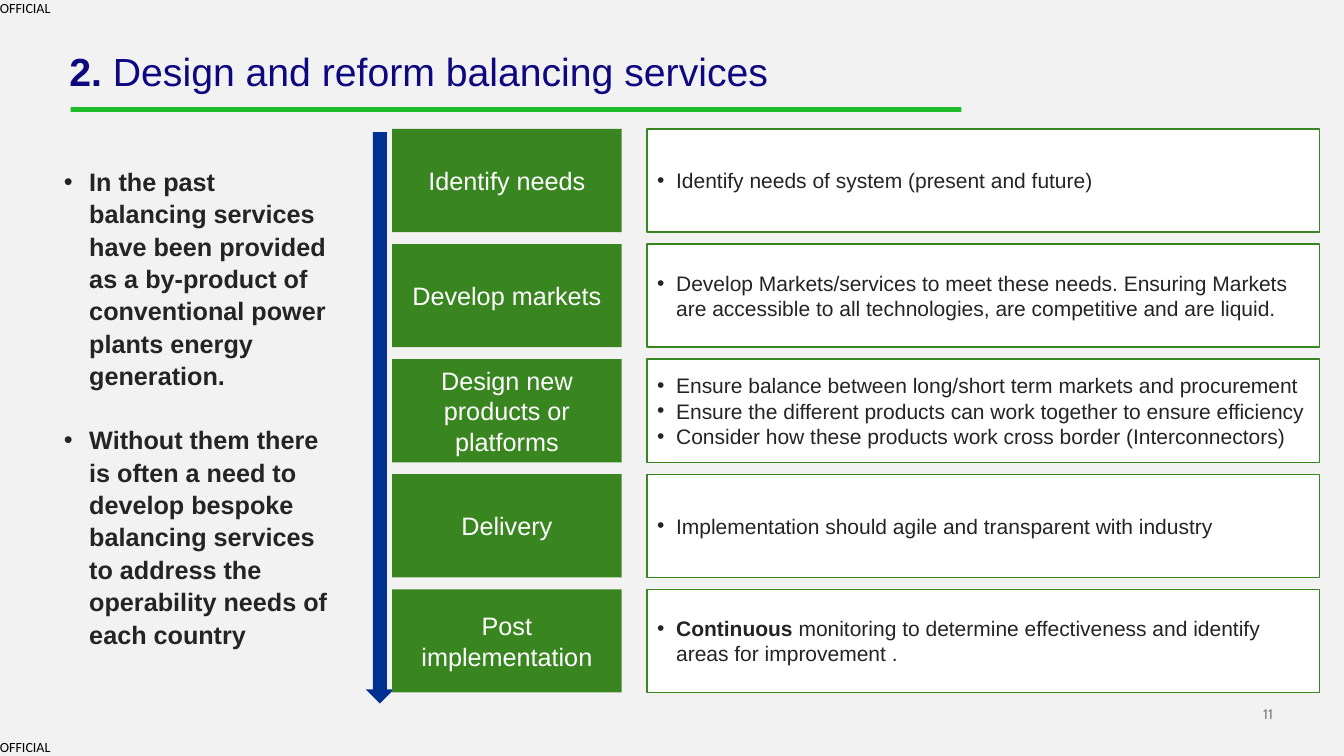
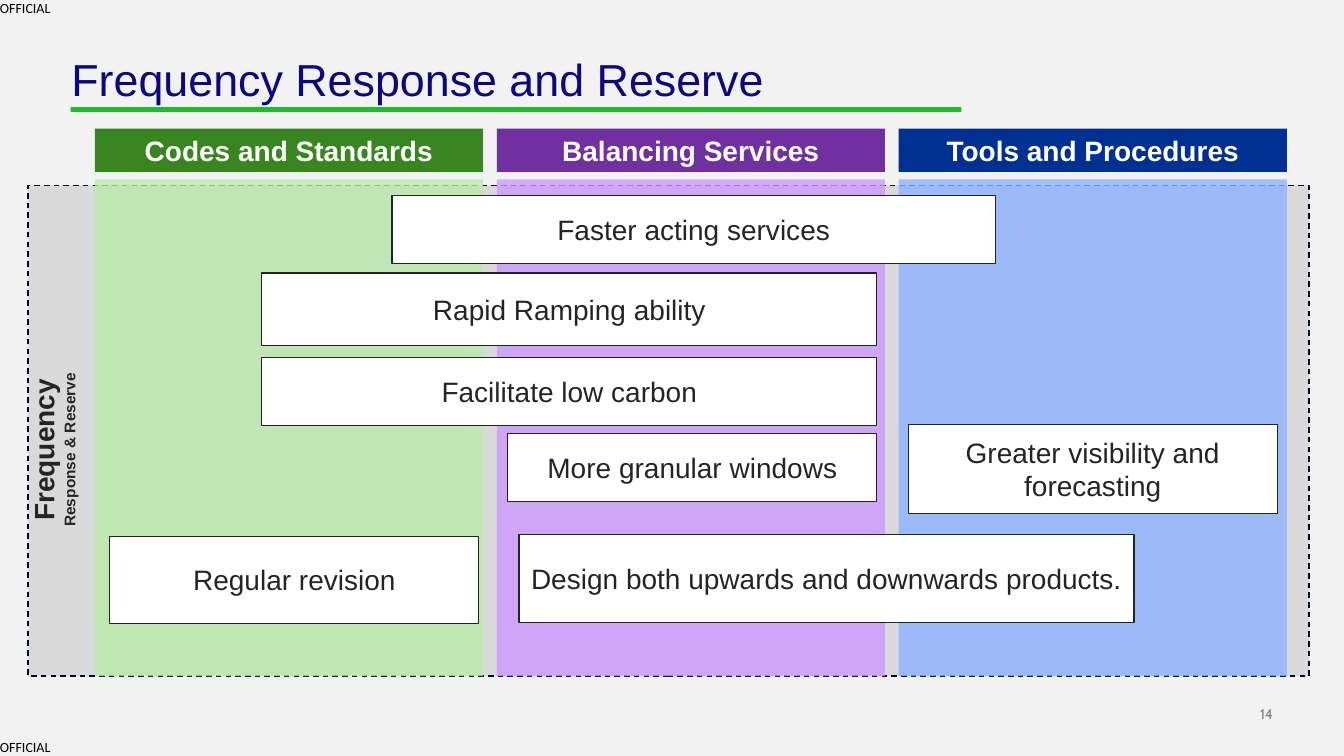
import lxml.etree
import pptx
import pptx.dml.color
import pptx.enum.dml
import pptx.enum.shapes
import pptx.enum.text
import pptx.oxml.ns
import pptx.util

Cm = pptx.util.Cm
Pt = pptx.util.Pt
Align = pptx.enum.text.PP_ALIGN
Anchor = pptx.enum.text.MSO_ANCHOR
Form = pptx.enum.shapes.MSO_SHAPE
qn = pptx.oxml.ns.qn


class Deck:
    """Hold the shared style and the current slide, and draw its elements."""

    hues = {
        "back": "F2F2F2", "title": "0D0780", "rule": "1CBC2B", "ink": "242424",
        "black": "000000", "white": "FFFFFF", "page": "7F7F7F", "grey": "D9D9D9",
        "dash": "000D28", "green": "398621", "purple": "7030A0", "blue": "003192",
        "mint": "BAEAAB", "lilac": "CC99FF", "sky": "8DB3FF",
    }

    def __init__(self):
        self.show = pptx.Presentation()
        self.show.slide_width = Cm(33.87)
        self.show.slide_height = Cm(19.05)
        self.slide = None

    def hue(self, name):
        return pptx.dml.color.RGBColor.from_string(self.hues[name])

    def page(self, number):
        self.slide = self.show.slides.add_slide(self.show.slide_layouts[6])
        fill = self.slide.background.fill
        fill.solid()
        fill.fore_color.rgb = self.hue("back")
        self.text((31.01, 17.78, 1.07, 0.43), number, 10, "page", font="Cabin",
                  align=Align.RIGHT, anchor=Anchor.BOTTOM)
        for top in (0, 18.62):
            self.text((0, top, 1.6, 0.43), "OFFICIAL", 10, "black", font="Calibri")
        self.shape((1.78, 2.7, 22.45, 0.12), "rule")

    def ink(self, run, size, hue, bold=False, font="Arial"):
        run.font.name = font
        run.font.size = Pt(size)
        run.font.bold = bold
        run.font.color.rgb = self.hue(hue)

    def fit(self, shape, text, size, hue, bold=False, font="Arial",
            align=Align.LEFT, anchor=Anchor.MIDDLE):
        frame = shape.text_frame
        frame.word_wrap = True
        frame.vertical_anchor = anchor
        frame.text = text
        for para in frame.paragraphs:
            para.alignment = align
            for run in para.runs:
                self.ink(run, size, hue, bold, font)

    def lead(self, shape, text, size, hue):
        para = shape.text_frame.paragraphs[0]
        para.runs[0].font.bold = True
        run = para.add_run()
        run.text = text
        self.ink(run, size, hue)

    def text(self, area, text, size, hue, inset=0, anchor=Anchor.TOP, **style):
        box = self.slide.shapes.add_textbox(*map(Cm, area))
        frame = box.text_frame
        frame.margin_left = frame.margin_right = Cm(inset)
        frame.margin_top = frame.margin_bottom = Cm(inset / 2)
        self.fit(box, text, size, hue, anchor=anchor, **style)
        return box

    def title(self, area, text, size):
        box = self.text(area, text, size, "title")
        box.text_frame.paragraphs[0].line_spacing = 0.9
        return box

    def shape(self, area, fill, line=None, width=1, form=Form.RECTANGLE, alpha=None):
        item = self.slide.shapes.add_shape(form, *map(Cm, area))
        item.shadow.inherit = False
        item.fill.solid()
        item.fill.fore_color.rgb = self.hue(fill)
        if alpha:
            tint = item.element.spPr.find(".//" + qn("a:srgbClr"))
            lxml.etree.SubElement(tint, qn("a:alpha")).set("val", str(alpha * 1000))
        if line:
            item.line.color.rgb = self.hue(line)
            item.line.width = Pt(width)
        else:
            item.line.fill.background()
        return item

    def label(self, area, text, size, fill, hue="white", bold=False, line=None):
        item = self.shape(area, fill, line, 0.75)
        self.fit(item, text, size, hue, bold, align=Align.CENTER)

    def bullets(self, shape, left, hang):
        for para in shape.text_frame.paragraphs:
            props = para._p.get_or_add_pPr()
            props.set("marL", str(Cm(left)))
            props.set("indent", str(-Cm(hang)))
            lxml.etree.SubElement(props, qn("a:buFont")).set("typeface", "Arial")
            lxml.etree.SubElement(props, qn("a:buChar")).set("char", "•")


def design(deck):
    deck.page("11")
    title = deck.title((1.75, 1.32, 23.7, 1.07), "2. ", 28)
    deck.lead(title, "Design and reform balancing services", 28, "title")

    notes = deck.text(
        (1.24, 4.01, 7.52, 12.55),
        "In the past balancing services have been provided as a by-product of "
        "conventional power plants energy generation.\n"
        "Without them there is often a need to develop bespoke balancing services "
        "to address the operability needs of each country",
        18, "ink", inset=0.25, bold=True)
    for para in notes.text_frame.paragraphs:
        para.line_spacing = 1.07
    notes.text_frame.paragraphs[1].space_before = Pt(23)
    deck.bullets(notes, 0.76, 0.64)

    deck.shape((9.22, 3.33, 0.71, 14.4), "blue", form=Form.DOWN_ARROW)
    steps = [
        ("Identify needs", "", "Identify needs of system (present and future)"),
        ("Develop markets", "",
         "Develop Markets/services to meet these needs. Ensuring Markets are "
         "accessible to all technologies, are competitive and are liquid."),
        ("Design new products or platforms", "",
         "Ensure balance between long/short term markets and procurement\n"
         "Ensure the different products can work together to ensure efficiency\n"
         "Consider how these products work cross border (Interconnectors)"),
        ("Delivery", "", "Implementation should agile and transparent with industry"),
        ("Post implementation", "Continuous",
         " monitoring to determine effectiveness and identify areas for improvement ."),
    ]
    for row, (name, lead, detail) in enumerate(steps):
        top = 3.25 + 2.9 * row
        deck.label((9.88, top, 5.79, 2.6), name, 18, "green")
        card = deck.shape((16.31, top, 16.94, 2.6), "white", "green")
        deck.fit(card, lead or detail, 15, "ink")
        if lead:
            deck.lead(card, detail, 15, "ink")
        deck.bullets(card, 0.48, 0.48)


def reserve(deck):
    deck.page("14")
    deck.title((1.8, 1.45, 22.5, 1.22), "Frequency Response and Reserve", 32)
    frame = deck.shape((0.71, 4.67, 32.28, 12.37), "grey", "dash")
    frame.line.dash_style = pptx.enum.dml.MSO_LINE.DASH

    side = deck.text((-4.37, 10.41, 11.38, 1.85), "Frequency\nResponse & Reserve",
                     20, "ink", inset=0.25, bold=True,
                     align=Align.CENTER, anchor=Anchor.MIDDLE)
    side.text_frame.paragraphs[1].runs[0].font.size = Pt(11)
    side.rotation = 270

    heads = [
        ("Codes and Standards", "green", "mint"),
        ("Balancing Services", "purple", "lilac"),
        ("Tools and Procedures", "blue", "sky"),
    ]
    for col, (name, dark, pale) in enumerate(heads):
        left = 2.39 + 10.13 * col
        deck.label((left, 3.24, 9.78, 1.09), name, 20, dark, bold=True)
        deck.shape((left, 4.52, 9.78, 12.52), pale, alpha=80)

    cards = [
        ("Faster acting services", 9.88, 4.93, 15.21, 1.7),
        ("Rapid Ramping ability", 6.6, 6.88, 15.5, 1.83),
        ("Facilitate low carbon", 6.6, 9, 15.5, 1.73),
        ("More granular windows", 12.8, 10.92, 9.3, 1.73),
        ("Design both upwards and downwards products.", 13.08, 13.46, 15.5, 2.24),
        ("Greater visibility and forecasting", 22.89, 10.69, 9.3, 2.24),
        ("Regular revision", 2.77, 13.51, 9.3, 2.2),
    ]
    for name, *area in cards:
        deck.label(area, name, 20, "white", "ink", line="ink")


def main():
    deck = Deck()
    design(deck)
    reserve(deck)
    deck.show.save("out.pptx")


if __name__ == "__main__":
    main()
